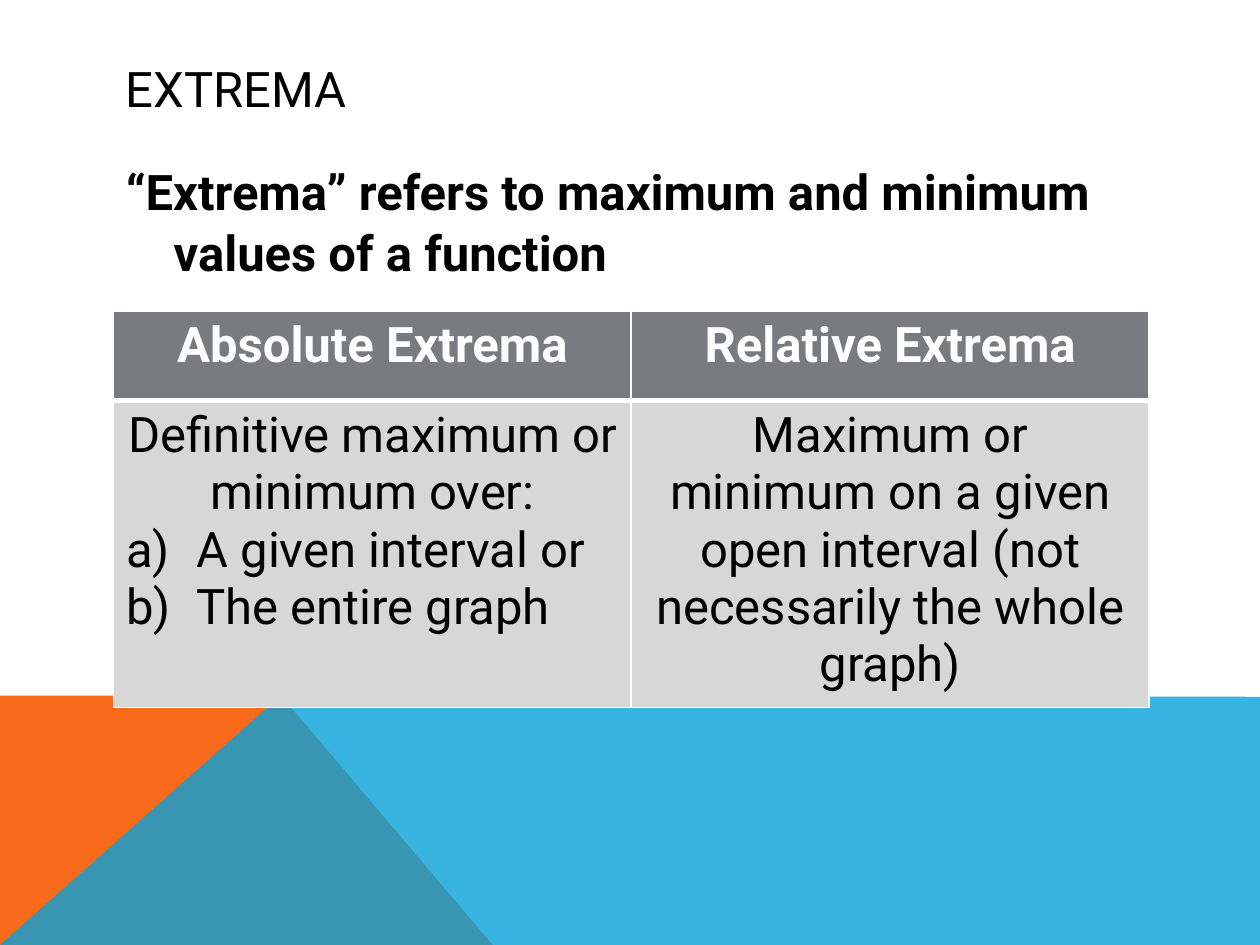
from pptx import Presentation
from pptx.dml.color import RGBColor
from pptx.enum.text import MSO_ANCHOR, PP_ALIGN
from pptx.oxml import parse_xml
from pptx.oxml.ns import nsdecls, qn
from pptx.util import Inches, Pt
from lxml.etree import SubElement

THEME = {
    "font": "Roboto", "size": 28,
    "ink": "000000", "paper": "FFFFFF",
    "head": "797B7E", "cell": "D7D7D8",
    "orange": "F96A1B", "blue": "08A1D9",
}
TITLE = "EXTREMA"
BODY = "“Extrema” refers to maximum and minimum values of a function"
HEADS = ["Absolute Extrema", "Relative Extrema"]
CELLS = [
    (["Definitive maximum or minimum over:"],
     ["A given interval or", "The entire graph"]),
    (["Maximum or minimum on a given open interval "
      "(not necessarily the whole graph)"], []),
]
WEDGES = [
    ("orange", 100, [(0, 7.5), (0, 5.52), (2.23, 5.52), (3.91, 7.5)]),
    ("blue", 80, [(0, 7.5), (2.23, 5.52), (10, 5.53), (10, 7.5)]),
]
LEFT, WIDTH = 0.9, 8.22
ROWS = [0.71, 2.03]
EDGES = {"lnL": 1, "lnR": 1, "lnT": 1, "lnB": 1}


def color(name):
    return RGBColor.from_string(THEME[name])


def style(para, ink, bold=False):
    font = para.font
    font.name, font.size, font.bold = THEME["font"], Pt(THEME["size"]), bold
    font.color.rgb = color(ink)


def indent(para, inches):
    props = para._p.get_or_add_pPr()
    props.set("marL", str(Inches(inches)))
    props.set("indent", str(-Inches(inches)))
    return props


def wedge(slide, fill, alpha, points):
    scaled = [(Inches(x), Inches(y)) for x, y in points]
    path = slide.shapes.build_freeform(*scaled[0])
    path.add_line_segments(scaled[1:], close=True)
    shape = path.convert_to_shape()
    shape.shadow.inherit = False
    shape.fill.solid()
    shape.fill.fore_color.rgb = color(fill)
    shape.line.fill.background()
    if alpha < 100:
        tone = shape._element.spPr.find(qn("a:solidFill"))[0]
        SubElement(tone, qn("a:alpha")).set("val", str(alpha * 1000))


def label(slide, text, top, high, bold=False):
    box = slide.shapes.add_textbox(
        Inches(LEFT), Inches(top), Inches(WIDTH), Inches(high))
    frame = box.text_frame
    frame.word_wrap = True
    para = frame.paragraphs[0]
    para.text = text
    style(para, "ink", bold)
    return frame


def border(cell, edges):
    props = cell._tc.get_or_add_tcPr()
    for spot, (tag, width) in enumerate(edges.items()):
        props.insert(spot, parse_xml(
            f'<a:{tag} {nsdecls("a")} w="{Pt(width)}"><a:solidFill>'
            f'<a:srgbClr val="{THEME["paper"]}"/></a:solidFill></a:{tag}>'))


def fill_cell(cell, lines, items, fill, ink, bold, edges):
    cell.fill.solid()
    cell.fill.fore_color.rgb = color(fill)
    border(cell, edges)
    cell.text = "\n".join(lines + items)
    for spot, para in enumerate(cell.text_frame.paragraphs):
        style(para, ink, bold)
        if spot < len(lines):
            para.alignment = PP_ALIGN.CENTER
        else:
            mark = SubElement(indent(para, 0.56), qn("a:buAutoNum"))
            mark.set("type", "alphaLcParenR")


def grid(slide):
    table = slide.shapes.add_table(
        len(ROWS), len(HEADS), Inches(LEFT), Inches(2.47),
        Inches(WIDTH), Inches(sum(ROWS))).table
    for row, high in zip(table.rows, ROWS):
        row.height = Inches(high)
    for col, (head, (lines, items)) in enumerate(zip(HEADS, CELLS)):
        fill_cell(table.cell(0, col), [head], [], "head", "paper", True,
                  {**EDGES, "lnB": 3})
        fill_cell(table.cell(1, col), lines, items, "cell", "ink", False,
                  {**EDGES, "lnT": 3})


def main():
    """Build the extrema slide and save it."""
    deck = Presentation()
    deck.slide_width, deck.slide_height = Inches(10), Inches(7.5)
    slide = deck.slides.add_slide(deck.slide_layouts[6])
    for part in WEDGES:
        wedge(slide, *part)
    label(slide, TITLE, 0.4, 0.6).vertical_anchor = MSO_ANCHOR.MIDDLE
    para = label(slide, BODY, 1.22, 3.89, True).paragraphs[0]
    para.line_spacing = 1.03
    indent(para, 0.38)
    grid(slide)
    deck.save("out.pptx")


if __name__ == "__main__":
    main()
